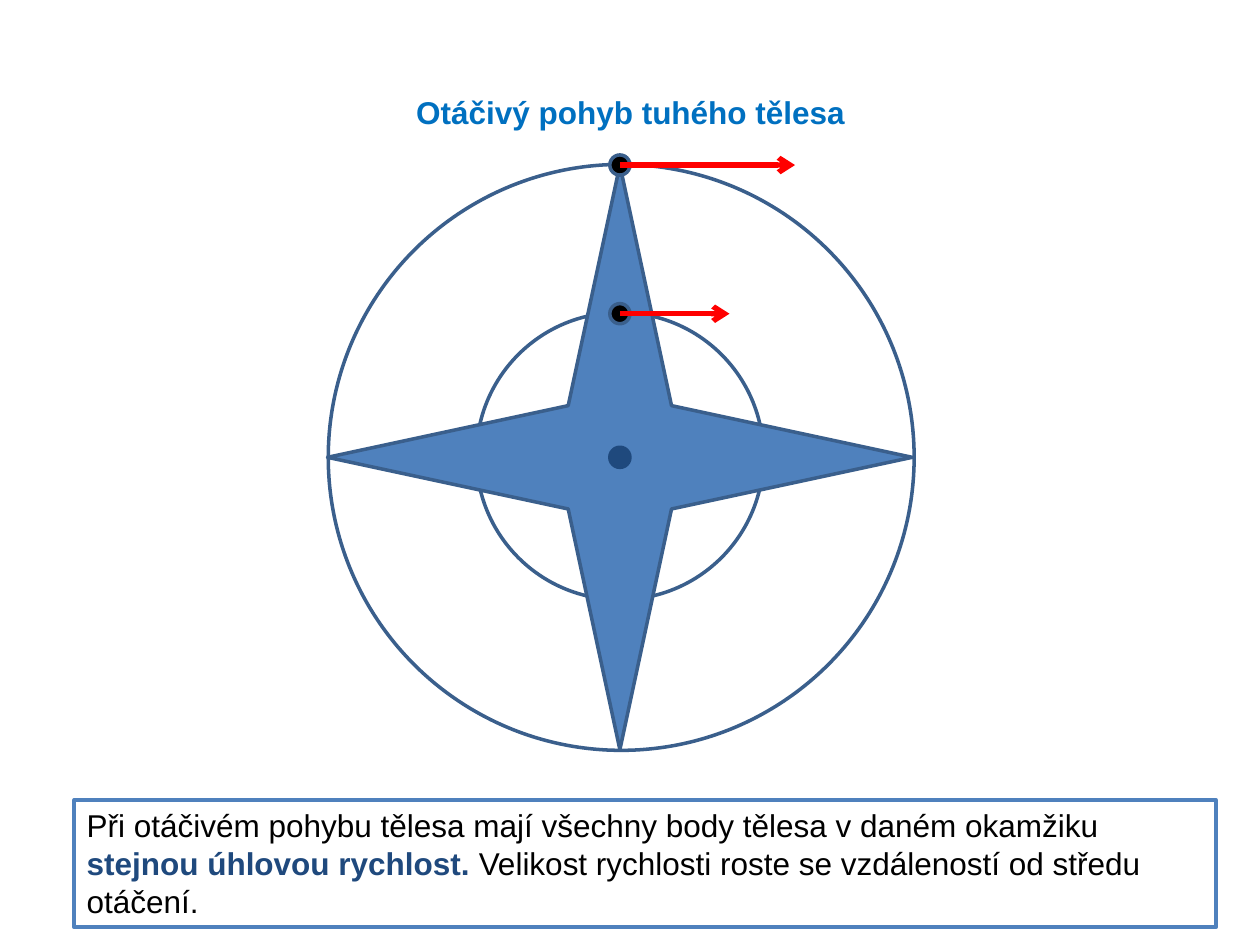
from typing import NamedTuple, Optional

from lxml import etree
from pptx import Presentation
from pptx.dml.color import RGBColor
from pptx.enum.shapes import MSO_CONNECTOR, MSO_SHAPE
from pptx.enum.text import MSO_ANCHOR, MSO_AUTO_SIZE, PP_ALIGN
from pptx.oxml.ns import qn
from pptx.util import Inches, Pt

ELLIPSE = MSO_SHAPE.OVAL
STAR = MSO_SHAPE.STAR_4_POINT
RECTANGLE = MSO_SHAPE.RECTANGLE
STRAIGHT = MSO_CONNECTOR.STRAIGHT

FONT = "Arial"
BLACK, NAVY, BLUE = "000000", "1F497D", "4F81BD"
OUTLINE, TITLE_BLUE, RED = "3A5F8C", "0070C0", "FF0000"
AXIS_X, AXIS_Y = 4.92, 3.63
OUTER_Y, INNER_Y = 1.31, 2.49
DOT_SIZE = 0.16


class Figure(NamedTuple):
    """A square preset shape given by its centre and size in inches."""
    kind: MSO_SHAPE
    x: float
    y: float
    size: float
    fill: Optional[str]
    line: str = OUTLINE


class Velocity(NamedTuple):
    y: float
    length: float


class Span(NamedTuple):
    text: str
    color: str
    bold: bool = False


ORBITS = [
    Figure(ELLIPSE, AXIS_X + 0.01, AXIS_Y, 4.65, None),
    Figure(ELLIPSE, AXIS_X, AXIS_Y - 0.01, 2.28, None),
]
BODY = [
    Figure(STAR, AXIS_X, AXIS_Y, 4.64, BLUE),
    Figure(ELLIPSE, AXIS_X, AXIS_Y, DOT_SIZE, NAVY, NAVY),
    Figure(ELLIPSE, AXIS_X, OUTER_Y, DOT_SIZE, BLACK),
    Figure(ELLIPSE, AXIS_X, INNER_Y, DOT_SIZE, BLACK),
]
VELOCITIES = [Velocity(OUTER_Y, 1.39), Velocity(INNER_Y, 0.87)]
TITLE = [Span("Otáčivý pohyb tuhého tělesa", TITLE_BLUE, True)]
STATEMENT = [
    Span("Při otáčivém pohybu tělesa mají všechny body tělesa v daném okamžiku ", BLACK),
    Span("stejnou úhlovou rychlost. ", NAVY, True),
    Span("Velikost rychlosti roste se vzdáleností od středu otáčení.", BLACK),
]


def rgb(color: str) -> RGBColor:
    return RGBColor.from_string(color)


def style_shape(shape, fill: Optional[str], line: str, width: float) -> None:
    shape.shadow.inherit = False
    if fill:
        shape.fill.solid()
        shape.fill.fore_color.rgb = rgb(fill)
    else:
        shape.fill.background()
    shape.line.color.rgb = rgb(line)
    shape.line.width = Pt(width)


def add_figure(shapes, figure: Figure) -> None:
    corner = [Inches(middle - figure.size / 2) for middle in (figure.x, figure.y)]
    size = Inches(figure.size)
    shape = shapes.add_shape(figure.kind, *corner, size, size)
    style_shape(shape, figure.fill, figure.line, 2)


def add_velocity(shapes, velocity: Velocity) -> None:
    y = Inches(velocity.y)
    arrow = shapes.add_connector(
        STRAIGHT, Inches(AXIS_X), y, Inches(AXIS_X + velocity.length), y)
    arrow.line.color.rgb = rgb(RED)
    arrow.line.width = Pt(3)
    etree.SubElement(arrow.line._get_or_add_ln(), qn("a:tailEnd"), type="arrow")
    etree.SubElement(arrow._element.spPr, qn("a:effectLst"))


def write(box, spans: list[Span], alignment: PP_ALIGN) -> None:
    frame = box.text_frame
    frame.word_wrap = True
    frame.auto_size = MSO_AUTO_SIZE.SHAPE_TO_FIT_TEXT
    frame.vertical_anchor = MSO_ANCHOR.TOP
    para = frame.paragraphs[0]
    para.alignment = alignment
    for span in spans:
        run = para.add_run()
        run.text = span.text
        run.font.name = FONT
        run.font.size = Pt(18)
        run.font.bold = span.bold
        run.font.color.rgb = rgb(span.color)


def main() -> None:
    deck = Presentation()
    deck.slide_width, deck.slide_height = Inches(10), Inches(7.5)
    page = deck.slides.add_slide(deck.slide_layouts[5])

    title = page.shapes.title
    title.left, title.top = Inches(2.17), Inches(0.69)
    title.width, title.height = Inches(5.67), Inches(0.4)
    write(title, TITLE, PP_ALIGN.CENTER)

    for orbit in ORBITS:
        add_figure(page.shapes, orbit)
    body = page.shapes.add_group_shape()
    for part in BODY:
        add_figure(body.shapes, part)

    statement = page.shapes.add_shape(
        RECTANGLE, Inches(0.59), Inches(6.35), Inches(9.06), Inches(1.01))
    style_shape(statement, None, BLUE, 2.25)
    write(statement, STATEMENT, PP_ALIGN.LEFT)

    for velocity in VELOCITIES:
        add_velocity(page.shapes, velocity)
    deck.save("out.pptx")


if __name__ == "__main__":
    main()
